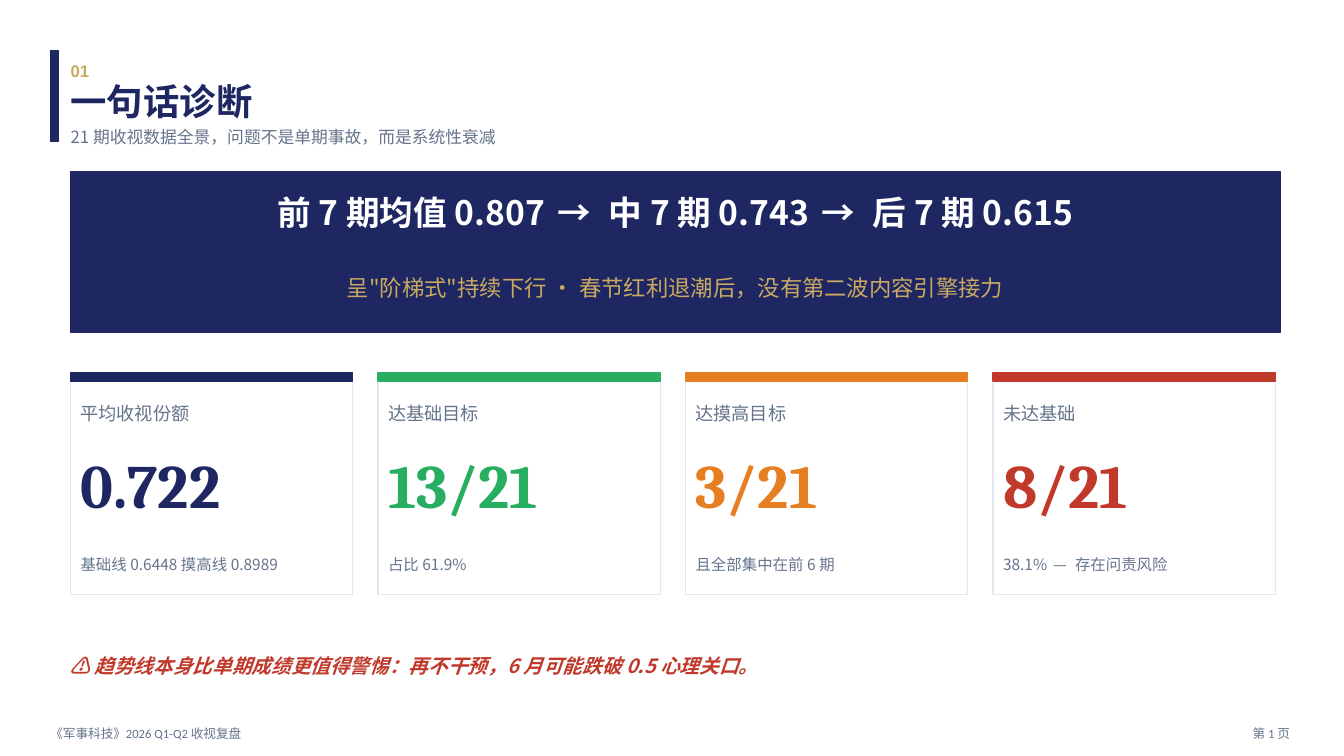
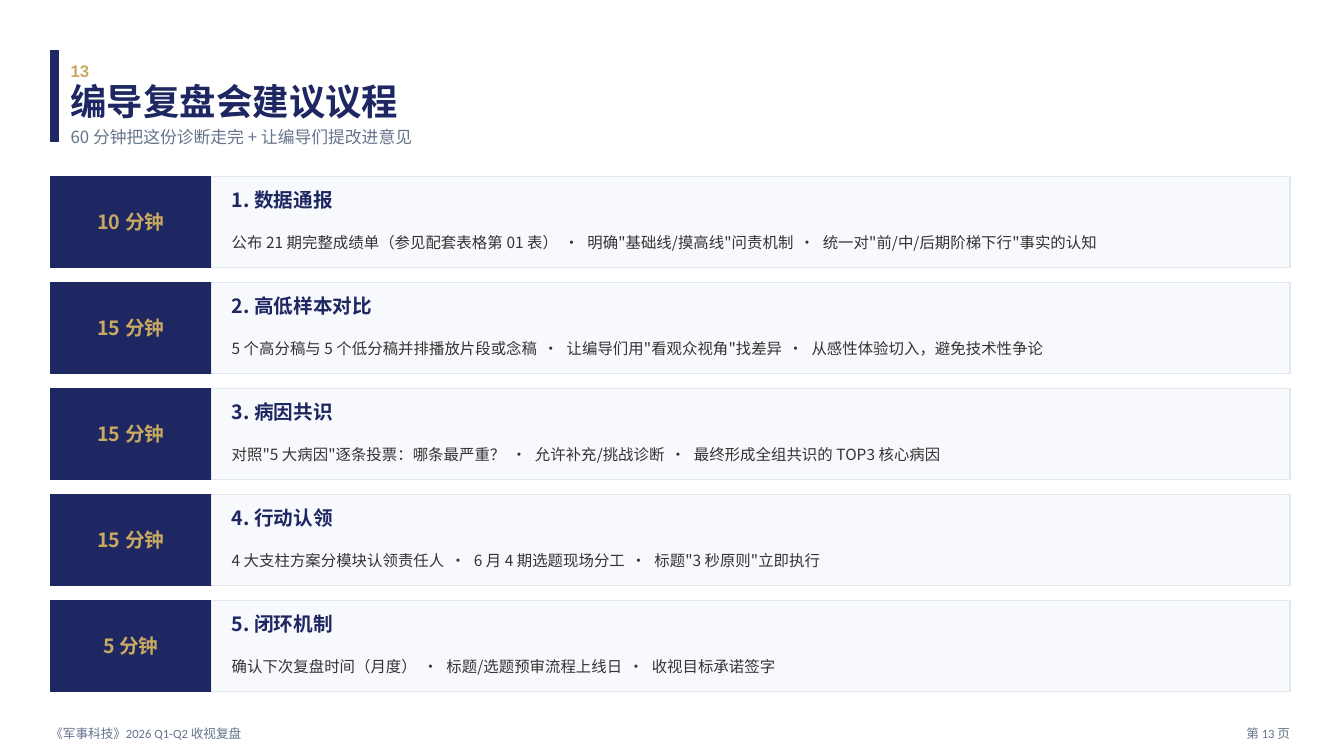
import lxml.etree
import pptx
import pptx.dml.color
import pptx.enum.shapes
import pptx.enum.text
import pptx.oxml.ns
import pptx.util

Cm = pptx.util.Cm
Pt = pptx.util.Pt
ALIGN = pptx.enum.text.PP_ALIGN
SANS = "Noto Sans CJK SC"
LEFT = 1.27
INNER = 1.78
WIDE = 30.48

COLORS = {
    "navy": "1E2761",
    "gold": "C9A961",
    "slate": "64748B",
    "ink": "333333",
    "white": "FFFFFF",
    "pale": "F7F9FC",
    "edge": "E2E8F0",
    "green": "27AE60",
    "orange": "E67E22",
    "red": "C0392B",
}

CARDS = [
    ("navy", "平均收视份额", "0.722", ["基础线 0.6448 摸高线 0.8989"]),
    ("green", "达基础目标", "13/21", ["占比 61.9%"]),
    ("orange", "达摸高目标", "3/21", ["且全部集中在前 6 期"]),
    ("red", "未达基础", "8/21", ["38.1%", "存在问责风险"]),
]

STEPS = [
    (10, "数据通报", [
        "公布 21 期完整成绩单（参见配套表格第 01 表）",
        "明确\"基础线/摸高线\"问责机制",
        "统一对\"前/中/后期阶梯下行\"事实的认知",
    ]),
    (15, "高低样本对比", [
        "5 个高分稿与 5 个低分稿并排播放片段或念稿",
        "让编导们用\"看观众视角\"找差异",
        "从感性体验切入，避免技术性争论",
    ]),
    (15, "病因共识", [
        "对照\"5 大病因\"逐条投票：哪条最严重？",
        "允许补充/挑战诊断",
        "最终形成全组共识的 TOP3 核心病因",
    ]),
    (15, "行动认领", [
        "4 大支柱方案分模块认领责任人",
        "6 月 4 期选题现场分工",
        "标题\"3 秒原则\"立即执行",
    ]),
    (5, "闭环机制", [
        "确认下次复盘时间（月度）",
        "标题/选题预审流程上线日",
        "收视目标承诺签字",
    ]),
]


def tint(name):
    return pptx.dml.color.RGBColor.from_string(COLORS[name])


def add_run(para, text, size, color, face=SANS, bold=False, slant=False):
    run = para.add_run()
    run.text = text
    font = run.font
    font.size = Pt(size)
    font.bold = bold
    font.italic = slant
    font.color.rgb = tint(color)
    font.name = face
    props = run._r.get_or_add_rPr()
    east = lxml.etree.SubElement(props, pptx.oxml.ns.qn("a:ea"))
    east.set("typeface", face)
    return props


def write(shape, parts, size, color, align=ALIGN.LEFT, mark="·", **style):
    frame = shape.text_frame
    frame.word_wrap = True
    frame.vertical_anchor = pptx.enum.text.MSO_ANCHOR.MIDDLE
    frame.margin_left = frame.margin_right = 0
    frame.margin_top = frame.margin_bottom = 0
    para = frame.paragraphs[0]
    para.alignment = align
    for index, part in enumerate(parts):
        if index:
            props = add_run(para, f" {mark} ", size, color, **style)
            props.set("spc", str(size * 15))
        add_run(para, part, size, color, **style)


def add_text(slide, area, parts, size, color, **style):
    box = slide.shapes.add_textbox(*map(Cm, area))
    write(box, parts, size, color, **style)


def add_rect(slide, area, fill, edge=None):
    kind = pptx.enum.shapes.MSO_SHAPE.RECTANGLE
    rect = slide.shapes.add_shape(kind, *map(Cm, area))
    rect.shadow.inherit = False
    rect.fill.solid()
    rect.fill.fore_color.rgb = tint(fill)
    rect.line.color.rgb = tint(edge or fill)
    rect.line.width = Pt(1)
    return rect


def add_page(deck, page, title, lead):
    slide = deck.slides.add_slide(deck.slide_layouts[6])
    add_rect(slide, (LEFT, 1.27, 0.2, 2.29), "navy")
    add_text(slide, (INNER, 1.14, 1.78, 1.27), [f"{page:02d}"], 12, "gold",
             face="Arial", bold=True)
    add_text(slide, (INNER, 1.78, 27.94, 1.52), [title], 26, "navy", bold=True)
    add_text(slide, (INNER, 3, WIDE, 0.89), [lead], 12, "slate")
    add_text(slide, (LEFT, 18.16, 15.24, 0.64), ["《军事科技》2026 Q1-Q2 收视复盘"],
             9, "slate", face="Calibri")
    add_text(slide, (29.97, 18.16, 2.54, 0.64), [f"第 {page} 页"], 9, "slate",
             face="Calibri", align=ALIGN.RIGHT)
    return slide


def add_card(slide, left, color, label, value, note):
    top, width = 9.4, 7.11
    inset, inner = left + 0.25, 6.6
    add_rect(slide, (left, top, width, 5.59), "white", "edge")
    add_rect(slide, (left, top, width, 0.2), color)
    add_text(slide, (inset, top + 0.51, inner, 1.02), [label], 13, "slate")
    add_text(slide, (inset, top + 1.52, inner, 2.54), [value], 44, color,
             face="Cambria", bold=True)
    add_text(slide, (inset, top + 4.32, inner, 1.02), note, 11, "slate", mark="—")


def add_step(slide, top, label, span, points):
    height, split = 2.29, 5.33
    block = add_rect(slide, (LEFT, top, split - LEFT, height), "navy")
    write(block, [f"{span} 分钟"], 14, "gold", align=ALIGN.CENTER, bold=True)
    add_rect(slide, (split, top, 27.18, height), "pale", "edge")
    add_text(slide, (split + 0.51, top + 0.13, 26.42, 0.89), [label], 14, "navy", bold=True)
    add_text(slide, (split + 0.51, top + 1.02, 26.42, 1.27), points, 11, "ink")


def draw_summary(deck):
    slide = add_page(deck, 1, "一句话诊断", "21 期收视数据全景，问题不是单期事故，而是系统性衰减")
    add_rect(slide, (INNER, 4.32, WIDE, 4.06), "navy")
    trend = ["前 7 期均值 0.807", "中 7 期 0.743", "后 7 期 0.615"]
    add_text(slide, (INNER, 4.45, WIDE, 1.78), trend, 24, "white",
             align=ALIGN.CENTER, mark="→", bold=True)
    add_text(slide, (INNER, 6.35, WIDE, 1.78),
             ["呈\"阶梯式\"持续下行 · 春节红利退潮后，没有第二波内容引擎接力"],
             16, "gold", align=ALIGN.CENTER)
    for index, card in enumerate(CARDS):
        add_card(slide, INNER + index * 7.75, *card)
    add_text(slide, (INNER, 16.26, WIDE, 1.02),
             ["⚠ 趋势线本身比单期成绩更值得警惕：再不干预，6 月可能跌破 0.5 心理关口。"],
             14, "red", bold=True, slant=True)


def draw_agenda(deck):
    slide = add_page(deck, 13, "编导复盘会建议议程", "60 分钟把这份诊断走完 + 让编导们提改进意见")
    for index, (span, name, points) in enumerate(STEPS):
        add_step(slide, 4.45 + index * 2.67, f"{index + 1}. {name}", span, points)


def main():
    deck = pptx.Presentation()
    deck.slide_width = Cm(33.87)
    deck.slide_height = Cm(19.05)
    draw_summary(deck)
    draw_agenda(deck)
    deck.save("out.pptx")


if __name__ == "__main__":
    main()
